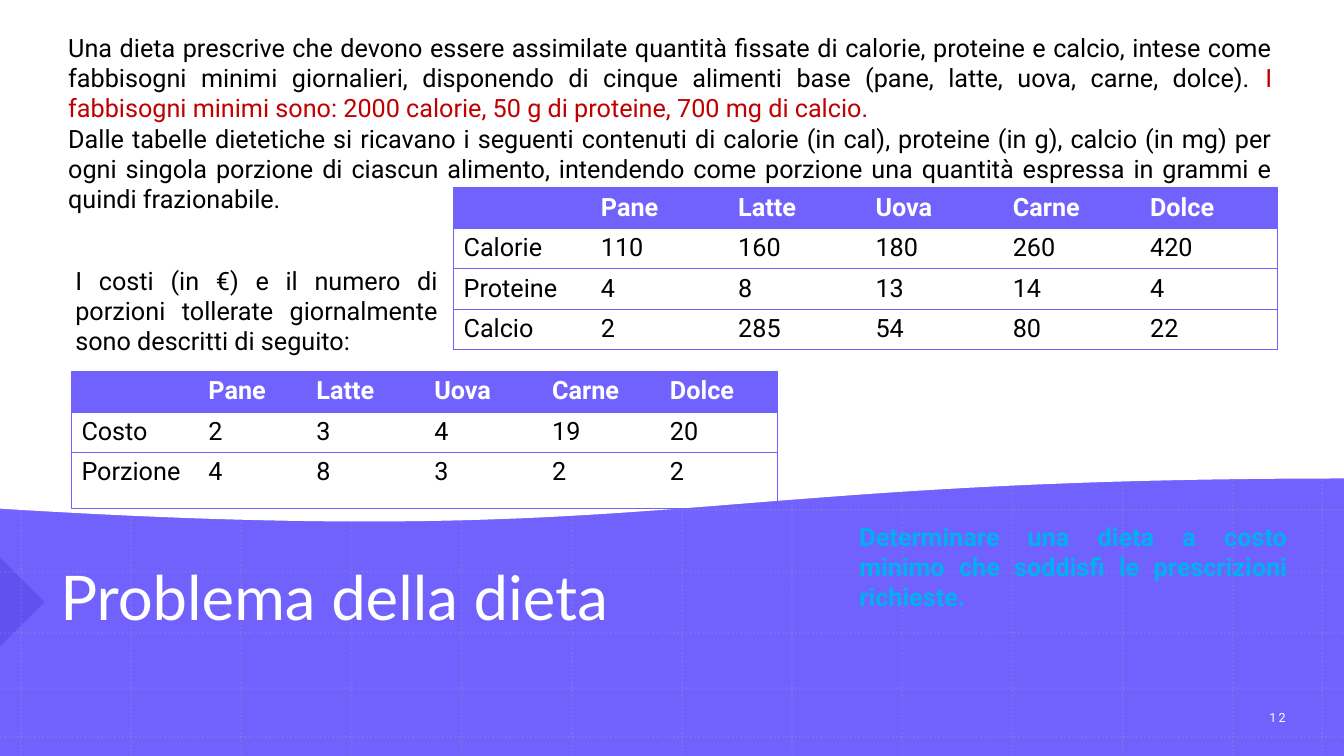
from lxml import etree
from pptx import Presentation
from pptx.dml.color import RGBColor
from pptx.enum.dml import MSO_LINE
from pptx.enum.shapes import MSO_CONNECTOR, MSO_SHAPE
from pptx.enum.text import MSO_ANCHOR, MSO_AUTO_SIZE, PP_ALIGN
from pptx.oxml.ns import qn
from pptx.util import Cm, Pt

RECTANGLE = MSO_SHAPE.RECTANGLE
RIGHT_TRIANGLE = MSO_SHAPE.RIGHT_TRIANGLE
STRAIGHT = MSO_CONNECTOR.STRAIGHT
DOTTED = MSO_LINE.ROUND_DOT
TOP, MIDDLE = MSO_ANCHOR.TOP, MSO_ANCHOR.MIDDLE
LEFT, CENTER, JUSTIFY = PP_ALIGN.LEFT, PP_ALIGN.CENTER, PP_ALIGN.JUSTIFY
FIT_SHAPE = MSO_AUTO_SIZE.SHAPE_TO_FIT_TEXT

COLORS = {
    "violet": "7162FE",
    "indigo": "1201AF",
    "grid": "B495C2",
    "white": "FFFFFF",
    "black": "000000",
    "red": "C00000",
    "cyan": "00B0F0",
}
SLIDE_WIDTH, SLIDE_HEIGHT = 33.87, 19.05
FOODS = ["", "Pane", "Latte", "Uova", "Carne", "Dolce"]
NUTRIENTS = [
    FOODS,
    ["Calorie", "110", "160", "180", "260", "420"],
    ["Proteine", "4", "8", "13", "14", "4"],
    ["Calcio", "2", "285", "54", "80", "22"],
]
COSTS = [
    FOODS,
    ["Costo", "2", "3", "4", "19", "20"],
    ["Porzione", "4", "8", "3", "2", "2"],
]
PRESCRIPTION = [
    [
        ("Una dieta prescrive che devono essere assimilate quantità fissate di calorie, "
         "proteine e calcio, intese come fabbisogni minimi giornalieri, disponendo di "
         "cinque alimenti base (pane, latte, uova, carne, dolce). ", "black"),
        ("I fabbisogni minimi sono: 2000 calorie, 50 g di proteine, 700 mg di calcio. ", "red"),
    ],
    [
        ("Dalle tabelle dietetiche si ricavano i seguenti contenuti di calorie (in cal), "
         "proteine (in g), calcio (in mg) per ogni singola porzione di ciascun alimento, "
         "intendendo come porzione una quantità espressa in grammi e quindi frazionabile.", "black"),
    ],
]
COST_INTRO = ("I costi (in €) e il numero di porzioni tollerate giornalmente "
              "sono descritti di seguito:")
GOAL = "Determinare una dieta a costo minimo che soddisfi le prescrizioni richieste."


def rgb(color):
    return RGBColor.from_string(COLORS[color])


def set_opacity(element, percent):
    for color in element.iter(qn("a:srgbClr")):
        etree.SubElement(color, qn("a:alpha"), val=str(percent * 1000))


def add_panel(slide, preset, left, top, width, height, color):
    panel = slide.shapes.add_shape(preset, Cm(left), Cm(top), Cm(width), Cm(height))
    panel.shadow.inherit = False
    panel.fill.solid()
    panel.fill.fore_color.rgb = rgb(color)
    panel.line.fill.background()
    return panel


def add_grid_line(slide, x1, y1, x2, y2):
    rule = slide.shapes.add_connector(STRAIGHT, Cm(x1), Cm(y1), Cm(x2), Cm(y2))
    rule.line.color.rgb = rgb("grid")
    rule.line.width = Pt(1.5)
    rule.line.dash_style = DOTTED
    properties = rule._element.spPr
    set_opacity(properties, 20)
    etree.SubElement(properties, qn("a:effectLst"))


def add_grid(slide):
    for x in [0.53 + 30.54 * i / 11 for i in range(12)] + [33.32]:
        add_grid_line(slide, x, 0, x, SLIDE_HEIGHT)
    for y in [0.48 + 15.47 * i / 10 for i in range(11)] + [17.35, 18.57]:
        add_grid_line(slide, 0, y, SLIDE_WIDTH, y)


def bezier(points, t):
    weights = [(1 - t) ** 3, 3 * t * (1 - t) ** 2, 3 * t ** 2 * (1 - t), t ** 3]
    return tuple(Cm(sum(w * p[axis] for w, p in zip(weights, points))) for axis in (0, 1))


def add_wave(slide):
    crest = [(33.9, 12.04), (17.02, 12.04), (16.92, 13.84), (0, 12.8)]
    steps = 60
    outline = [(Cm(33.9), Cm(-0.08))] + [bezier(crest, i / steps) for i in range(steps + 1)]
    builder = slide.shapes.build_freeform(Cm(0), Cm(-0.08))
    builder.add_line_segments(outline, close=True)
    wave = builder.convert_to_shape()
    wave.shadow.inherit = False
    wave.fill.solid()
    wave.fill.fore_color.rgb = rgb("white")
    wave.line.color.rgb = rgb("white")
    wave.line.width = Pt(1)


def add_run(paragraph, text, color, size=18, font="Roboto", bold=False):
    run = paragraph.add_run()
    run.text = text
    run.font.name = font
    run.font.size = Pt(size)
    run.font.bold = bold
    run.font.color.rgb = rgb(color)
    return run


def add_text(slide, left, top, width, height, align, anchor=TOP):
    frame = slide.shapes.add_textbox(Cm(left), Cm(top), Cm(width), Cm(height)).text_frame
    frame.word_wrap = True
    frame.vertical_anchor = anchor
    if anchor == TOP:
        frame.auto_size = FIT_SHAPE
    frame.paragraphs[0].alignment = align
    return frame


def set_borders(cell, visible):
    properties = cell._tc.get_or_add_tcPr()
    for side in "LRTB":
        border = etree.SubElement(properties, qn("a:ln" + side), w=str(Pt(0.5)))
        if side in visible:
            fill = etree.SubElement(border, qn("a:solidFill"))
            etree.SubElement(fill, qn("a:srgbClr"), val=COLORS["violet"])
        else:
            etree.SubElement(border, qn("a:noFill"))


def add_food_table(slide, rows, left, top, widths, heights):
    table = slide.shapes.add_table(len(rows), len(widths), Cm(left), Cm(top),
                                   Cm(sum(widths)), Cm(sum(heights))).table
    table.horz_banding = False
    for column, width in zip(table.columns, widths):
        column.width = Cm(width)
    for r, (row, height) in enumerate(zip(rows, heights)):
        table.rows[r].height = Cm(height)
        for c, text in enumerate(row):
            cell = table.cell(r, c)
            set_borders(cell, "TB" + "L" * (c == 0) + "R" * (c == len(row) - 1))
            if r == 0:
                cell.fill.solid()
                cell.fill.fore_color.rgb = rgb("violet")
            else:
                cell.fill.background()
            if text:
                add_run(cell.text_frame.paragraphs[0], text,
                        "black" if r else "white", bold=r == 0)


def main():
    presentation = Presentation()
    presentation.slide_width = Cm(SLIDE_WIDTH)
    presentation.slide_height = Cm(SLIDE_HEIGHT)
    slide = presentation.slides.add_slide(presentation.slide_layouts[6])

    add_panel(slide, RECTANGLE, 0, 0, SLIDE_WIDTH, SLIDE_HEIGHT, "violet")
    pointer = add_panel(slide, RIGHT_TRIANGLE, -0.79, 14.38, 1.58, 1.58, "indigo")
    pointer.rotation = 225
    set_opacity(pointer._element.spPr, 17)
    add_grid(slide)
    add_wave(slide)

    title = add_text(slide, 1.27, 12.93, 29.85, 4.42, LEFT, MIDDLE).paragraphs[0]
    title.line_spacing = 0.9
    add_run(title, "Problema della dieta", "white", 44, "Lato")
    page = add_text(slide, 31.09, 17.58, 2.21, 1.02, CENTER, MIDDLE).paragraphs[0]
    number = add_run(page, "12", "white", 9)
    number.font._element.set("spc", "150")

    prescription = add_text(slide, 1.47, 0.69, 30.84, 4.88, JUSTIFY)
    for i, runs in enumerate(PRESCRIPTION):
        paragraph = prescription.add_paragraph() if i else prescription.paragraphs[0]
        paragraph.alignment = JUSTIFY
        for text, color in runs:
            add_run(paragraph, text, color)

    add_food_table(slide, NUTRIENTS, 11.43, 4.73, [3.46] * 6, [1.02] * 4)
    intro = add_text(slide, 1.65, 6.55, 9.63, 2.57, JUSTIFY)
    add_run(intro.paragraphs[0], COST_INTRO, "black")
    add_food_table(slide, COSTS, 1.8, 9.36, [3.2, 2.72] + [2.97] * 4, [1.02, 1.02, 1.42])
    goal = add_text(slide, 21.41, 13, 11.28, 2.64, JUSTIFY)
    add_run(goal.paragraphs[0], GOAL, "cyan", bold=True)

    presentation.save("out.pptx")


if __name__ == "__main__":
    main()
